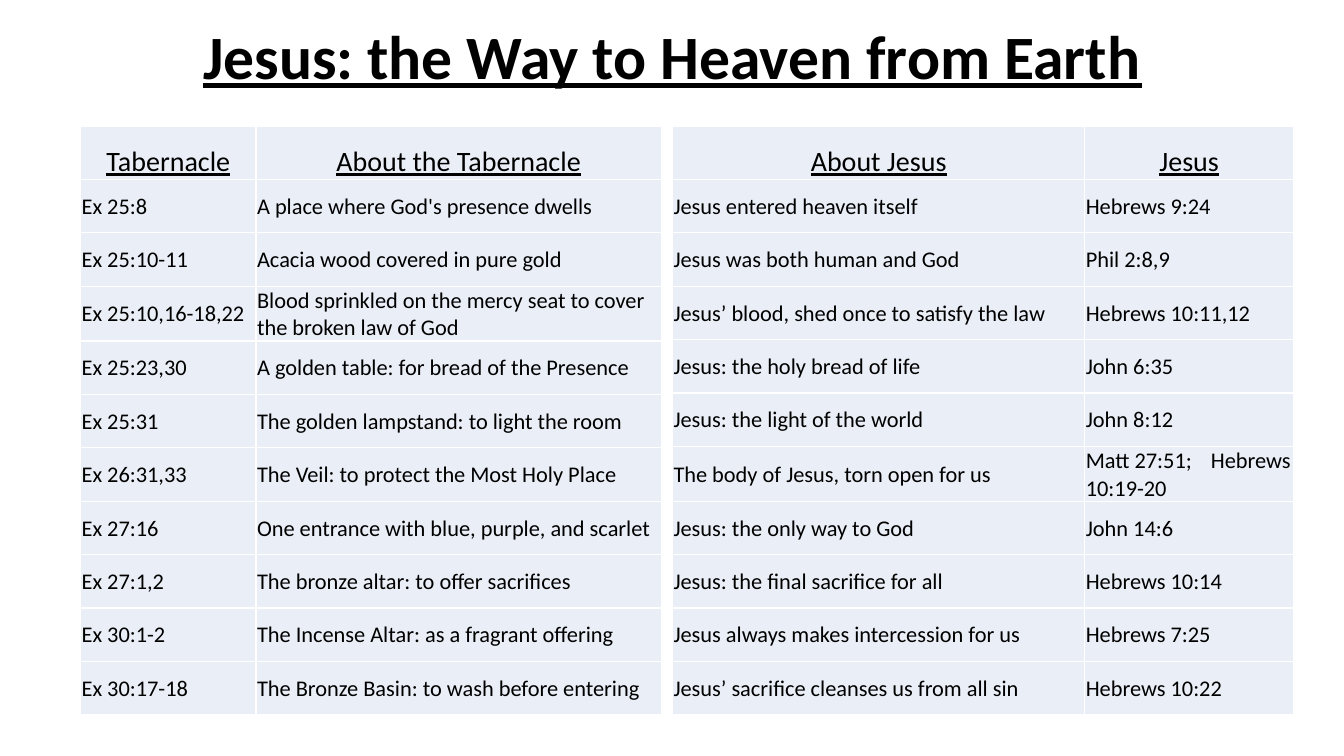
import pptx
import pptx.dml.color
import pptx.enum.text
import pptx.oxml.ns
import pptx.util
from lxml import etree
from pptx.util import Inches

RGBColor = pptx.dml.color.RGBColor
PP_ALIGN = pptx.enum.text.PP_ALIGN
MSO_ANCHOR = pptx.enum.text.MSO_ANCHOR
qn = pptx.oxml.ns.qn

BLACK = RGBColor(0x00, 0x00, 0x00)
WHITE = RGBColor(0xFF, 0xFF, 0xFF)
PALE_BLUE = RGBColor(0xEA, 0xEF, 0xF7)
FONT = "Calibri"
TABLE_TOP = 1.25
ROW_HEIGHT = 0.53
SECOND_REFERENCE_TAB = 1.24

TABERNACLE = [
    ("Tabernacle", "About the Tabernacle"),
    ("Ex 25:8", "A place where God's presence dwells"),
    ("Ex 25:10-11", "Acacia wood covered in pure gold"),
    ("Ex 25:10,16-18,22", "Blood sprinkled on the mercy seat to cover the broken law of God"),
    ("Ex 25:23,30", "A golden table: for bread of the Presence"),
    ("Ex 25:31", "The golden lampstand: to light the room"),
    ("Ex 26:31,33", "The Veil: to protect the Most Holy Place"),
    ("Ex 27:16", "One entrance with blue, purple, and scarlet"),
    ("Ex 27:1,2", "The bronze altar: to offer sacrifices"),
    ("Ex 30:1-2", "The Incense Altar: as a fragrant offering"),
    ("Ex 30:17-18", "The Bronze Basin: to wash before entering"),
]
JESUS = [
    ("About Jesus", "Jesus"),
    ("Jesus entered heaven itself", "Hebrews 9:24"),
    ("Jesus was both human and God", "Phil 2:8,9"),
    ("Jesus’ blood, shed once to satisfy the law", "Hebrews 10:11,12"),
    ("Jesus: the holy bread of life", "John 6:35"),
    ("Jesus: the light of the world", "John 8:12"),
    ("The body of Jesus, torn open for us", "Matt 27:51;\tHebrews 10:19-20"),
    ("Jesus: the only way to God", "John 14:6"),
    ("Jesus: the final sacrifice for all", "Hebrews 10:14"),
    ("Jesus always makes intercession for us", "Hebrews 7:25"),
    ("Jesus’ sacrifice cleanses us from all sin", "Hebrews 10:22"),
]


def set_text(tf, text, size, align, bold=False, underline=False):
    tf.text = text
    p = tf.paragraphs[0]
    p.alignment = align
    for r in p.runs:
        r.font.name = FONT
        r.font.size = pptx.util.Pt(size)
        r.font.bold = bold
        r.font.underline = underline
        r.font.color.rgb = BLACK
    return p


def add_tab_stop(p, position):
    tabs = etree.SubElement(p._p.get_or_add_pPr(), qn("a:tabLst"))
    etree.SubElement(tabs, qn("a:tab"), pos=str(Inches(position)), algn="l")


def add_borders(cell):
    tcPr = cell._tc.get_or_add_tcPr()
    for side in ("a:lnL", "a:lnR", "a:lnT", "a:lnB"):
        ln = etree.SubElement(tcPr, qn(side), w=str(pptx.util.Pt(1)))
        fill = etree.SubElement(ln, qn("a:solidFill"))
        etree.SubElement(fill, qn("a:srgbClr"), val=str(WHITE))


def format_cell(cell, text, header):
    cell.margin_left = cell.margin_right = cell.margin_top = Inches(0.01)
    cell.margin_bottom = 0
    cell.vertical_anchor = MSO_ANCHOR.BOTTOM if header else MSO_ANCHOR.MIDDLE
    add_borders(cell)
    cell.fill.solid()
    cell.fill.fore_color.rgb = PALE_BLUE
    p = set_text(cell.text_frame, text, 20 if header else 16,
                 PP_ALIGN.CENTER if header else PP_ALIGN.LEFT, underline=header)
    if "\t" in text:
        add_tab_stop(p, SECOND_REFERENCE_TAB)


def add_comparison_table(s, rows, left, widths):
    frame = s.shapes.add_table(len(rows), len(widths), Inches(left), Inches(TABLE_TOP),
                               Inches(sum(widths)), Inches(ROW_HEIGHT * len(rows)))
    table = frame.table
    table.first_row = table.horz_banding = False
    for column, width in zip(table.columns, widths):
        column.width = Inches(width)
    for i, row in enumerate(rows):
        table.rows[i].height = Inches(ROW_HEIGHT)
        for j, text in enumerate(row):
            format_cell(table.cell(i, j), text, header=i == 0)


def add_title(s, text):
    sp = s.shapes.add_textbox(Inches(0.92), Inches(0.07), Inches(11.5), Inches(1.04))
    tf = sp.text_frame
    tf.word_wrap = True
    tf.vertical_anchor = MSO_ANCHOR.MIDDLE
    p = set_text(tf, text, 44, PP_ALIGN.CENTER, bold=True, underline=True)
    p.line_spacing = 0.9


def main():
    prs = pptx.Presentation()
    prs.slide_width = Inches(13.33)
    prs.slide_height = Inches(7.5)
    s = prs.slides.add_slide(prs.slide_layouts[6])
    add_title(s, "Jesus: the Way to Heaven from Earth")
    add_comparison_table(s, JESUS, 6.67, (4.09, 2.07))
    add_comparison_table(s, TABERNACLE, 0.8, (1.74, 4.02))
    prs.save("out.pptx")


if __name__ == "__main__":
    main()
